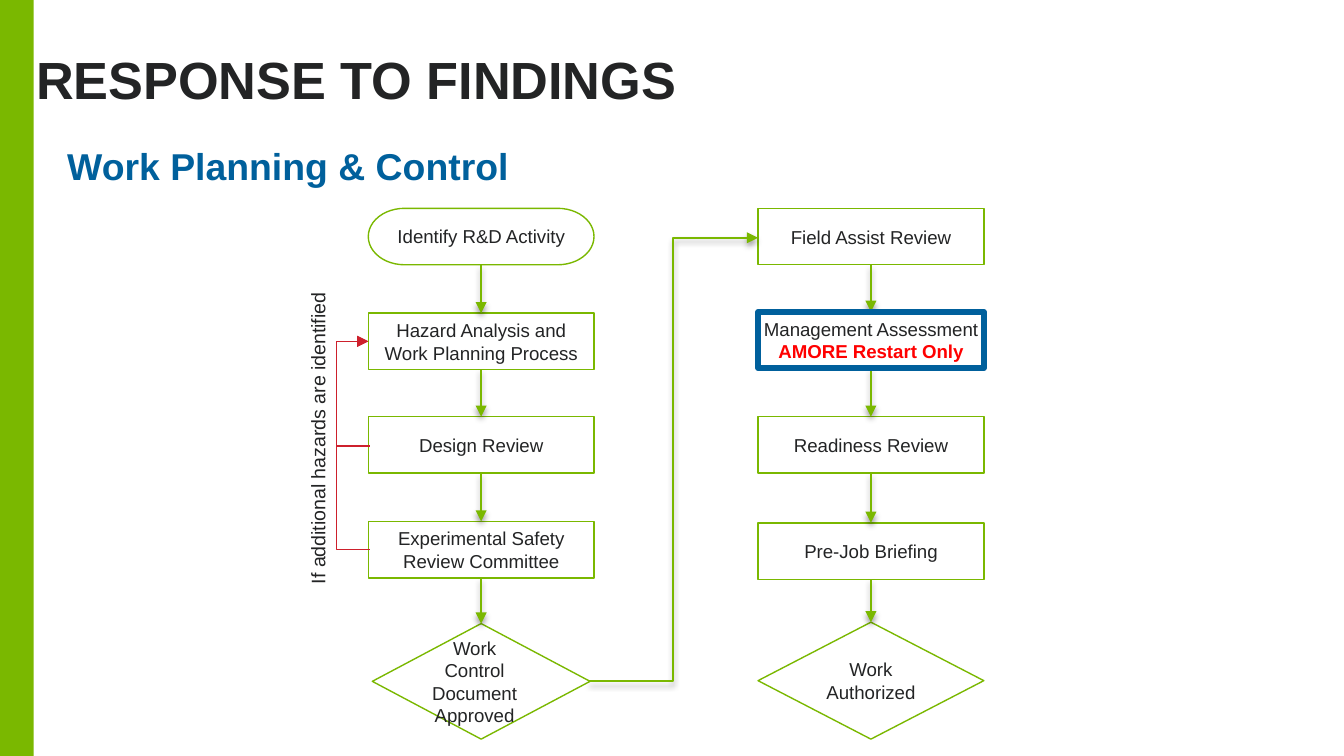
from dataclasses import dataclass
from typing import Optional

from lxml import etree
from pptx import Presentation
from pptx import util as u
from pptx.dml.color import RGBColor
from pptx.enum import shapes, text
from pptx.oxml import ns

GREEN = RGBColor(0x7A, 0xB8, 0x00)
BLUE = RGBColor(0x00, 0x60, 0x9C)
CRIMSON = RGBColor(0xCD, 0x20, 0x2C)
RED = RGBColor(0xFF, 0x00, 0x00)
INK = RGBColor(0x23, 0x24, 0x25)
WHITE = RGBColor(0xFF, 0xFF, 0xFF)

KIND = shapes.MSO_SHAPE
PROCESS = KIND.FLOWCHART_PROCESS
TOP, LEFT, BOTTOM, RIGHT = range(4)
MARGINS = ("margin_left", "margin_top", "margin_right", "margin_bottom")
NO_MARGIN = (0, 0, 0, 0)
BOX_MARGIN = (0.1, 0.05, 0.1, 0.05)

LEFT_X, RIGHT_X = 2.74, 5.64
BOX_W, BOX_H = 1.68, 0.42


@dataclass
class Line:
    text: str
    color: RGBColor = INK
    bold: bool = False
    size: float = 10


@dataclass
class Step:
    lines: list[Line]
    top: float
    kind: int = PROCESS
    height: float = BOX_H
    inset: float = 0  # narrows the shape on both sides
    margins: tuple = BOX_MARGIN
    border: RGBColor = GREEN
    weight: float = 0.75


LEFT_STEPS = [
    Step([Line("Identify R&D Activity")], 1.55, KIND.FLOWCHART_TERMINATOR),
    Step([Line("Hazard Analysis and"), Line("Work Planning Process")], 2.33),
    Step([Line("Design Review")], 3.1),
    Step([Line("Experimental Safety Review Committee")], 3.88),
    Step([Line("Work Control Document Approved")], 4.64, KIND.DIAMOND, 0.86,
         0.03, (0, 0.05, 0.1, 0.05)),
]
RIGHT_STEPS = [
    Step([Line("Field Assist Review")], 1.55),
    Step([Line("Management Assessment"), Line("AMORE Restart Only", RED, True)],
         2.32, margins=NO_MARGIN, border=BLUE, weight=3),
    Step([Line("Readiness Review")], 3.1),
    Step([Line("Pre-Job Briefing")], 3.89),
    Step([Line("Work Authorized")], 4.63, KIND.DIAMOND, 0.87, 0, NO_MARGIN),
]


def write(tf, lines: list[Line], margins: tuple, anchor, align,
          spacing: Optional[float] = None) -> None:
    tf.word_wrap = True
    tf.vertical_anchor = anchor
    for name, value in zip(MARGINS, margins):
        setattr(tf, name, u.Inches(value))
    for i, line in enumerate(lines):
        p = tf.add_paragraph() if i else tf.paragraphs[0]
        p.alignment = align
        p.line_spacing = spacing
        r = p.add_run()
        r.text = line.text
        font = {"name": "Arial", "size": u.Pt(line.size), "bold": line.bold}
        for name, value in font.items():
            setattr(r.font, name, value)
        r.font.color.rgb = line.color


def add_label(s, line: Line, box: tuple, margins: tuple = NO_MARGIN,
              anchor=text.MSO_ANCHOR.TOP, spacing: Optional[float] = None):
    sp = s.shapes.add_textbox(*map(u.Inches, box))
    write(sp.text_frame, [line], margins, anchor, text.PP_ALIGN.LEFT, spacing)
    return sp


def add_step(s, step: Step, x: float):
    sp = s.shapes.add_shape(
        step.kind, u.Inches(x + step.inset), u.Inches(step.top),
        u.Inches(BOX_W - 2 * step.inset), u.Inches(step.height))
    sp.shadow.inherit = False
    sp.fill.solid()
    sp.fill.fore_color.rgb = WHITE
    sp.line.color.rgb = step.border
    sp.line.width = u.Pt(step.weight)
    write(sp.text_frame, step.lines, step.margins, text.MSO_ANCHOR.MIDDLE,
          text.PP_ALIGN.CENTER)
    return sp


def add_arrow(s, kind, start: tuple, end: tuple, color: RGBColor,
              weight: float, shadow: bool):
    c = s.shapes.add_connector(kind, *map(u.Inches, start + end))
    c.line.color.rgb = color
    c.line.width = u.Pt(weight)
    etree.SubElement(c.line._get_or_add_ln(), ns.qn("a:tailEnd"), type="triangle")
    effects = etree.SubElement(c._element.spPr, ns.qn("a:effectLst"))
    if shadow:
        outer = etree.SubElement(
            effects, ns.qn("a:outerShdw"), blurRad=str(u.Pt(3)),
            dist=str(u.Pt(2)), dir="5400000", rotWithShape="0")
        black = etree.SubElement(outer, ns.qn("a:srgbClr"), val="000000")
        etree.SubElement(black, ns.qn("a:alpha"), val="40000")
    return c


def add_column(s, steps: list[Step], x: float) -> list:
    boxes = [add_step(s, step, x) for step in steps]
    for upper, lower in zip(boxes, boxes[1:]):
        c = add_arrow(s, shapes.MSO_CONNECTOR.STRAIGHT, (0, 0), (0, 0),
                      GREEN, 0.85, True)
        c.begin_connect(upper, BOTTOM)
        c.end_connect(lower, TOP)
    return boxes


def add_feedback(s, y: float, target_y: float) -> None:
    """Loop back to an earlier step, turning 0.25 in left of the start."""
    c = add_arrow(s, shapes.MSO_CONNECTOR.ELBOW, (LEFT_X + 0.01, y),
                  (LEFT_X, target_y), CRIMSON, 0.75, False)
    guides = c._element.spPr.find(ns.qn("a:prstGeom")).find(ns.qn("a:avLst"))
    etree.SubElement(guides, ns.qn("a:gd"), name="adj1", fmla="val 2500000")


def main() -> None:
    prs = Presentation()
    prs.slide_width = u.Inches(10)
    prs.slide_height = u.Inches(10 * 9 / 16)
    s = prs.slides.add_slide(prs.slide_layouts[6])

    # Side bar and headings
    bar = s.shapes.add_shape(KIND.RECTANGLE, 0, 0, u.Inches(0.25), prs.slide_height)
    bar.shadow.inherit = False
    bar.fill.solid()
    bar.fill.fore_color.rgb = GREEN
    bar.line.fill.background()
    add_label(s, Line("RESPONSE TO FINDINGS", INK, True, 28),
              (0.27, 0.15, 9.16, 0.68), anchor=text.MSO_ANCHOR.BOTTOM, spacing=0.95)
    add_label(s, Line("Work Planning & Control", BLUE, True, 20),
              (0.5, 1.1, 9.16, 0.41), spacing=0.9)

    # Flow columns; the highlighted step lies over its arrows
    add_column(s, LEFT_STEPS, LEFT_X)
    assessment = add_column(s, RIGHT_STEPS, RIGHT_X)[1]
    s.shapes._spTree.append(assessment._element)

    # Link from the approval to the second column
    add_arrow(s, shapes.MSO_CONNECTOR.ELBOW, (4.38, 5.07), (RIGHT_X, 1.77),
              GREEN, 0.85, True)

    # Feedback loops
    for y in (4.09, 3.32):
        add_feedback(s, y, 2.54)
    note = add_label(s, Line("If additional hazards are identified", size=10.5),
                     (1.01, 2.95, 2.71, 0.28), BOX_MARGIN)
    note.rotation = 270

    prs.save("out.pptx")


if __name__ == "__main__":
    main()
